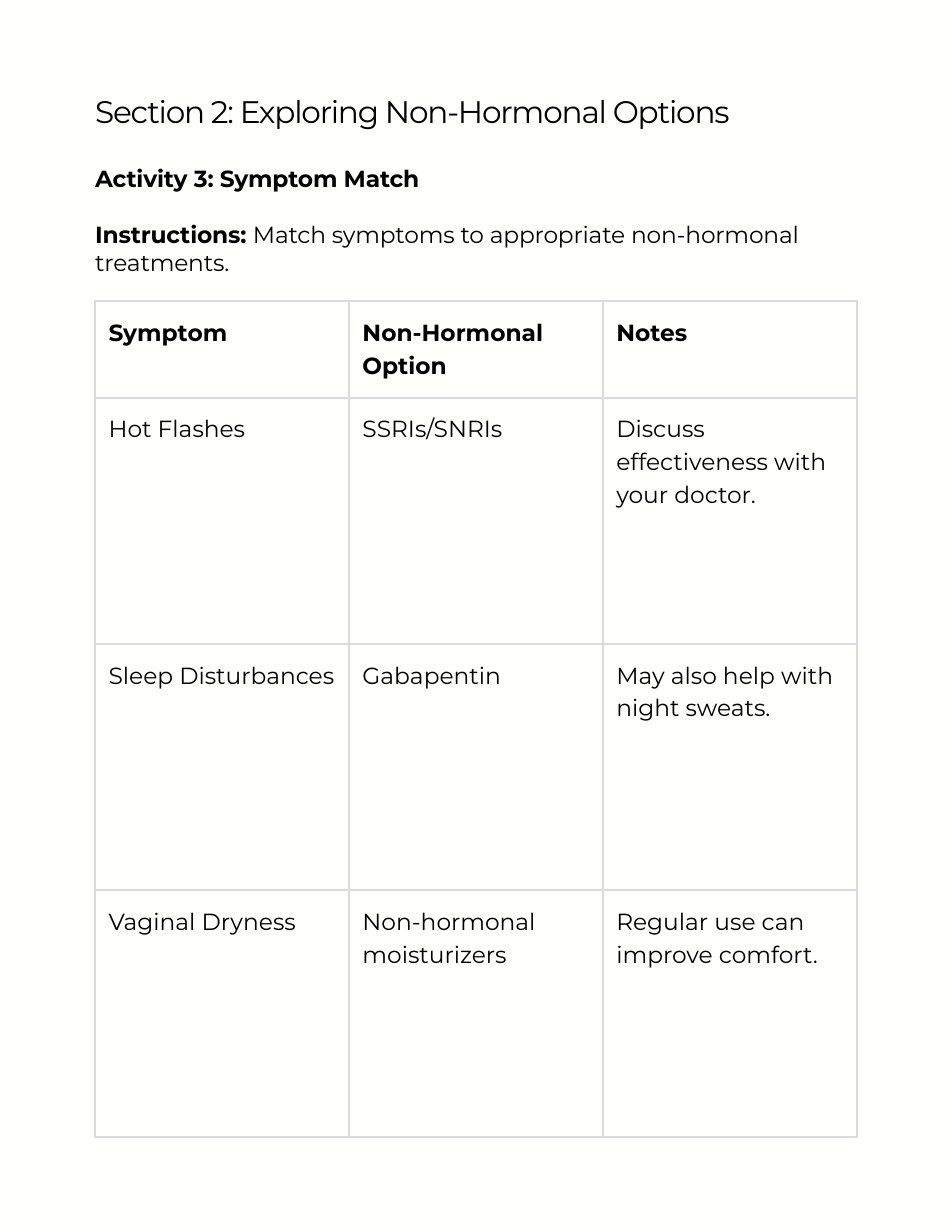
from dataclasses import dataclass

from lxml import etree
from pptx import Presentation
from pptx.dml.color import RGBColor
from pptx.enum import text
from pptx.oxml import ns
from pptx.util import Emu, Inches, Pt

COLORS = {"background": "FFFFFC", "text": "000000", "border": "DBDBDB"}
FONT = "Montserrat"
LEFT, WIDTH = 0.85, 6.8
BODY_SIZE = 15
CELL_MARGIN = 0.12
HEADER_HEIGHT, ROW_HEIGHT = 0.86, 2.2

TABLE_ROWS = [
    ("Symptom", "Non-Hormonal Option", "Notes"),
    ("Hot Flashes", "SSRIs/SNRIs", "Discuss effectiveness with your doctor."),
    ("Sleep Disturbances", "Gabapentin", "May also help with night sweats."),
    ("Vaginal Dryness", "Non-hormonal moisturizers", "Regular use can improve comfort."),
]


@dataclass
class TextRun:
    words: str
    size: float = BODY_SIZE
    bold: bool = False
    tracking: float = 0


def write_paragraph(paragraph, runs: list[TextRun], leading: float, gap: float = 0) -> None:
    paragraph_format = {
        "alignment": text.PP_ALIGN.LEFT,
        "line_spacing": Pt(leading),
        "space_before": Pt(gap),
        "space_after": Pt(0),
    }
    for name, value in paragraph_format.items():
        setattr(paragraph, name, value)
    for text_run in runs:
        run = paragraph.add_run()
        run.text = text_run.words
        font_format = {"name": FONT, "size": Pt(text_run.size), "bold": text_run.bold}
        for name, value in font_format.items():
            setattr(run.font, name, value)
        run.font.color.rgb = RGBColor.from_string(COLORS["text"])
        if text_run.tracking:
            run._r.get_or_add_rPr().set("spc", str(round(text_run.tracking * 100)))


def place_placeholder(shape, top: float, height: float):
    shape.left, shape.top = Inches(LEFT), Inches(top)
    shape.width, shape.height = Inches(WIDTH), Inches(height)
    frame = shape.text_frame
    frame_format = {
        "margin_left": 0, "margin_top": 0, "margin_right": 0, "margin_bottom": 0,
        "word_wrap": True,
        "auto_size": text.MSO_AUTO_SIZE.NONE,
        "vertical_anchor": text.MSO_ANCHOR.TOP,
    }
    for name, value in frame_format.items():
        setattr(frame, name, value)
    return frame


def remove_bullet(paragraph) -> None:
    properties = paragraph._p.get_or_add_pPr()
    properties.set("marL", "0")
    properties.set("indent", "0")
    etree.SubElement(properties, ns.qn("a:buNone"))


def draw_borders(cell, color: str, width: float) -> None:
    properties = cell._tc.get_or_add_tcPr()
    for side in ("lnL", "lnR", "lnT", "lnB"):
        line = etree.SubElement(properties, ns.qn(f"a:{side}"), w=str(Pt(width)))
        fill = etree.SubElement(line, ns.qn("a:solidFill"))
        etree.SubElement(fill, ns.qn("a:srgbClr"), val=color)


def add_symptom_table(slide, top: float) -> None:
    row_count, column_count = len(TABLE_ROWS), len(TABLE_ROWS[0])
    heights = [HEADER_HEIGHT] + [ROW_HEIGHT] * (row_count - 1)
    table = slide.shapes.add_table(
        row_count, column_count,
        Inches(LEFT), Inches(top), Inches(WIDTH), Inches(sum(heights)),
    ).table
    table.first_row = table.horz_banding = False
    for column in table.columns:
        column.width = Emu(Inches(WIDTH) // column_count)
    for row_index, (row, height) in enumerate(zip(table.rows, heights)):
        row.height = Inches(height)
        for cell, words in zip(row.cells, TABLE_ROWS[row_index]):
            for side in ("left", "top", "right", "bottom"):
                setattr(cell, f"margin_{side}", Inches(CELL_MARGIN))
            draw_borders(cell, COLORS["border"], 1.5)
            cell.fill.background()
            run = TextRun(words, bold=row_index == 0)
            write_paragraph(cell.text_frame.paragraphs[0], [run], leading=21)


def main() -> None:
    presentation = Presentation()
    presentation.slide_width, presentation.slide_height = Inches(8.5), Inches(11)
    slide = presentation.slides.add_slide(presentation.slide_layouts[1])
    slide.background.fill.solid()
    slide.background.fill.fore_color.rgb = RGBColor.from_string(COLORS["background"])

    # Section title
    title = place_placeholder(slide.shapes.title, 0.91, 0.27)
    heading = TextRun("Section 2: Exploring Non-Hormonal Options", size=20, tracking=-0.8)
    write_paragraph(title.paragraphs[0], [heading], leading=18)

    # Activity and instructions
    body = place_placeholder(slide.placeholders[1], 1.47, 0.93)
    activity = [TextRun("Activity 3: Symptom Match", bold=True, tracking=-0.1)]
    instructions = [
        TextRun("Instructions: ", bold=True, tracking=-0.1),
        TextRun("Match symptoms to appropriate non-hormonal treatments.", tracking=-0.1),
    ]
    write_paragraph(body.paragraphs[0], activity, leading=18)
    write_paragraph(body.add_paragraph(), instructions, leading=18, gap=18)
    for paragraph in body.paragraphs:
        remove_bullet(paragraph)

    # Symptom matching table
    add_symptom_table(slide, 2.69)

    presentation.save("out.pptx")


if __name__ == "__main__":
    main()
